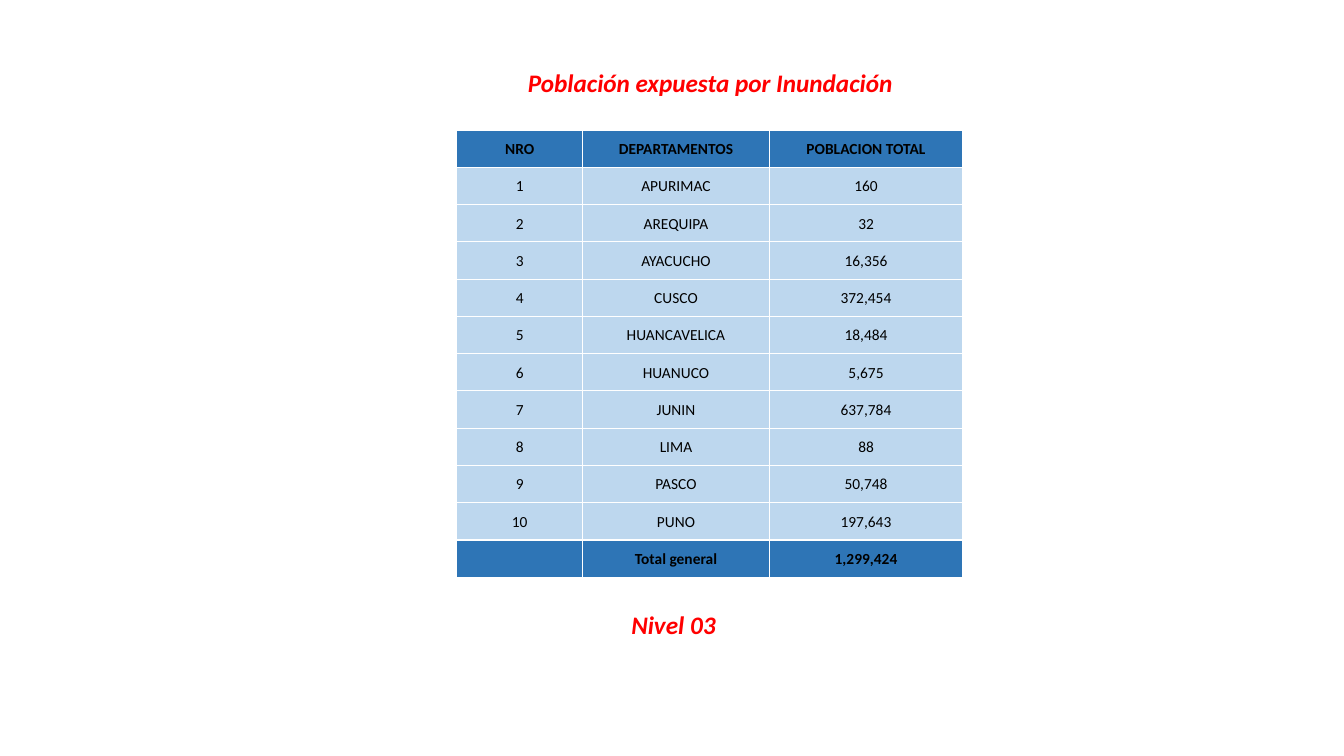
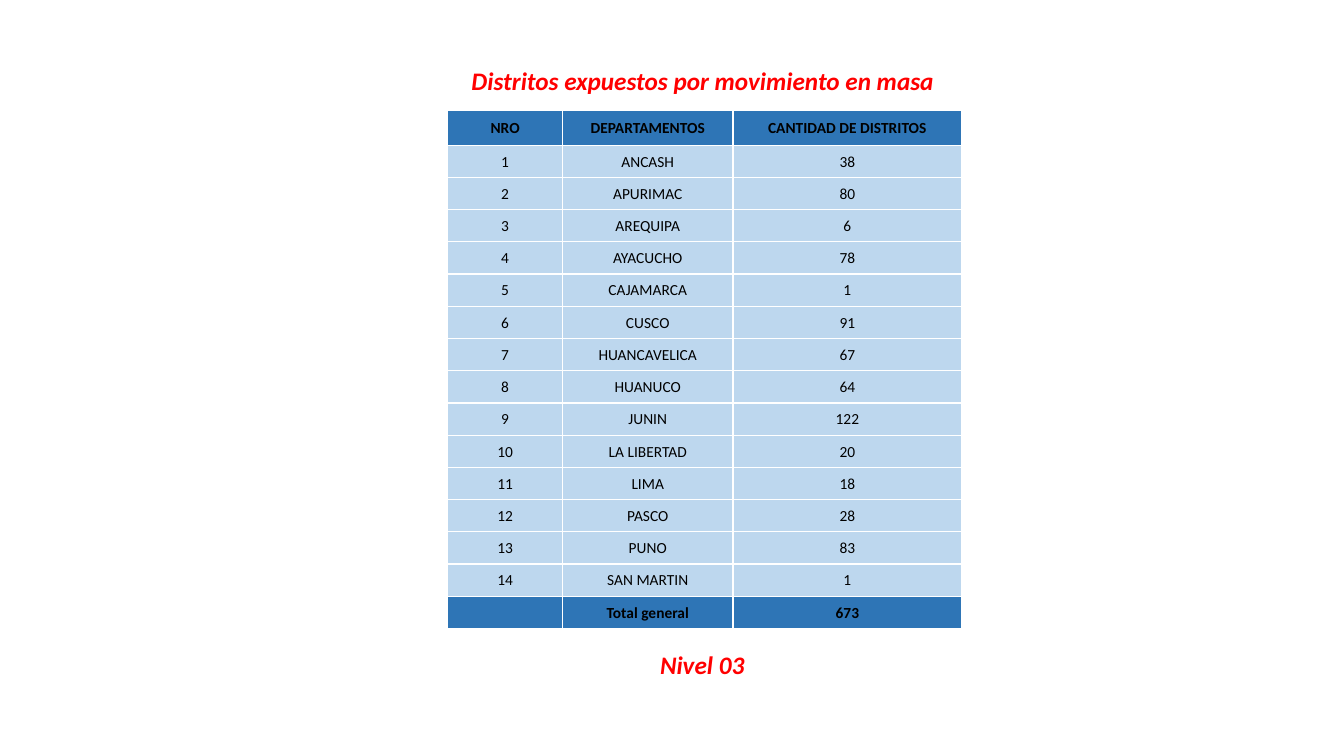
import pptx
import pptx.dml.color
import pptx.enum.text
import pptx.oxml.ns
import pptx.util
from lxml import etree

Inches = pptx.util.Inches
RGBColor = pptx.dml.color.RGBColor

# Shared style
RED = RGBColor(0xFF, 0x00, 0x00)
BLACK = RGBColor(0x00, 0x00, 0x00)
WHITE = RGBColor(0xFF, 0xFF, 0xFF)
DARK_BLUE = RGBColor(0x2E, 0x75, 0xB6)
LIGHT_BLUE = RGBColor(0xBD, 0xD7, 0xEE)
FONT = "Calibri"
CAPTION_SIZE = pptx.util.Pt(18)
CELL_SIZE = pptx.util.Pt(11)
BORDER_WIDTH = pptx.util.Pt(1)
CAPTION_HEIGHT = 0.4
LEVEL = "Nivel 03"

# Content: places are (left, top, width) for captions and (left, top) for tables
SLIDES = [
    {
        "title": "Población expuesta por Inundación",
        "title_place": (5.12, 0.62, 3.85),
        "level_place": (6.13, 6, 1.1),
        "table_place": (4.53, 1.29),
        "column_widths": (1.25, 1.85, 1.92),
        "header_height": 0.37,
        "row_height": 0.37,
        "value_header": "POBLACION TOTAL",
        "departments": [
            ("APURIMAC", 160), ("AREQUIPA", 32), ("AYACUCHO", 16356),
            ("CUSCO", 372454), ("HUANCAVELICA", 18484), ("HUANUCO", 5675),
            ("JUNIN", 637784), ("LIMA", 88), ("PASCO", 50748),
            ("PUNO", 197643),
        ],
        "total": 1299424,
    },
    {
        "title": "Distritos expuestos por movimiento en masa",
        "title_place": (4.55, 0.6, 4.84),
        "level_place": (6.13, 6.39, 1.67),
        "table_place": (4.44, 1.1),
        "column_widths": (1.14, 1.69, 2.27),
        "header_height": 0.34,
        "row_height": 0.32,
        "value_header": "CANTIDAD DE DISTRITOS",
        "departments": [
            ("ANCASH", 38), ("APURIMAC", 80), ("AREQUIPA", 6),
            ("AYACUCHO", 78), ("CAJAMARCA", 1), ("CUSCO", 91),
            ("HUANCAVELICA", 67), ("HUANUCO", 64), ("JUNIN", 122),
            ("LA LIBERTAD", 20), ("LIMA", 18), ("PASCO", 28),
            ("PUNO", 83), ("SAN MARTIN", 1),
        ],
        "total": 673,
    },
]


def write_text(text_frame, text, size, color, bold, italic=False):
    paragraph = text_frame.paragraphs[0]
    paragraph.alignment = pptx.enum.text.PP_ALIGN.CENTER
    paragraph.font.size = size
    if text:
        run = paragraph.add_run()
        run.text = text
        run.font.name = FONT
        run.font.size = size
        run.font.color.rgb = color
        run.font.bold = bold
        run.font.italic = italic


def add_caption(slide, text, place, wrap):
    left, top, width = map(Inches, place)
    box = slide.shapes.add_textbox(left, top, width, Inches(CAPTION_HEIGHT))
    box.text_frame.word_wrap = wrap
    box.text_frame.auto_size = pptx.enum.text.MSO_AUTO_SIZE.SHAPE_TO_FIT_TEXT
    write_text(box.text_frame, text, CAPTION_SIZE, RED, True, True)


def add_borders(cell):
    qn = pptx.oxml.ns.qn
    properties = cell._tc.get_or_add_tcPr()
    for side in ("a:lnL", "a:lnR", "a:lnT", "a:lnB"):
        line = etree.SubElement(properties, qn(side), w=str(BORDER_WIDTH))
        fill = etree.SubElement(line, qn("a:solidFill"))
        etree.SubElement(fill, qn("a:srgbClr"), val=str(WHITE))


def style_cell(cell, text, emphasized):
    cell.margin_left = cell.margin_right = cell.margin_top = Inches(0.01)
    cell.margin_bottom = 0
    cell.vertical_anchor = pptx.enum.text.MSO_ANCHOR.MIDDLE
    add_borders(cell)
    cell.fill.solid()
    cell.fill.fore_color.rgb = DARK_BLUE if emphasized else LIGHT_BLUE
    write_text(cell.text_frame, text, CELL_SIZE, BLACK, emphasized)


def add_department_table(slide, content):
    # Header, numbered departments and total
    rows = [("NRO", "DEPARTAMENTOS", content["value_header"])]
    for number, (name, value) in enumerate(content["departments"], start=1):
        rows.append((str(number), name, f"{value:,}"))
    rows.append(("", "Total general", f"{content['total']:,}"))

    widths = content["column_widths"]
    heights = [content["header_height"]] + [content["row_height"]] * (len(rows) - 1)
    left, top = map(Inches, content["table_place"])
    table = slide.shapes.add_table(
        len(rows), len(widths), left, top,
        Inches(sum(widths)), Inches(sum(heights))).table

    for column, width in zip(table.columns, widths):
        column.width = Inches(width)
    for row_index, (row, height) in enumerate(zip(rows, heights)):
        table.rows[row_index].height = Inches(height)
        emphasized = row_index in (0, len(rows) - 1)
        for column_index, text in enumerate(row):
            style_cell(table.cell(row_index, column_index), text, emphasized)


def main():
    presentation = pptx.Presentation()
    presentation.slide_width = Inches(13.33)
    presentation.slide_height = Inches(7.5)
    for content in SLIDES:
        slide = presentation.slides.add_slide(presentation.slide_layouts[6])
        add_caption(slide, content["title"], content["title_place"], wrap=False)
        add_caption(slide, LEVEL, content["level_place"], wrap=True)
        add_department_table(slide, content)
    presentation.save("out.pptx")


if __name__ == "__main__":
    main()
